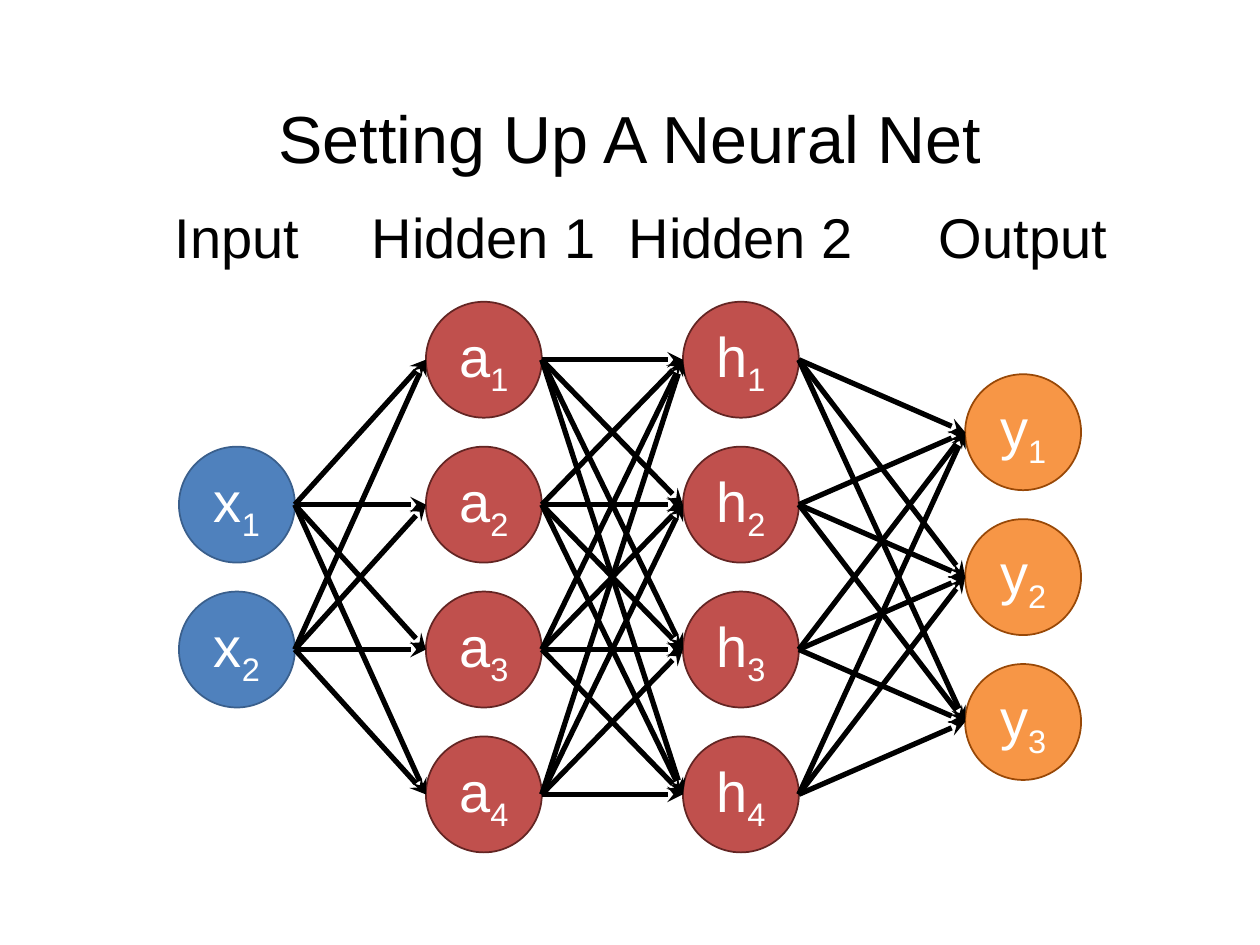
"""Build a slide of a neural net with two hidden layers."""
from dataclasses import dataclass
from itertools import pairwise, product

from lxml import etree
from pptx import Presentation
from pptx import util as u
from pptx.dml.color import RGBColor
from pptx.enum import shapes, text
from pptx.oxml.ns import qn
from pptx.slide import Slide


@dataclass(frozen=True)
class Theme:
    """Colours, font and type sizes of the slide."""
    font: str = "Arial"
    ink: str = "000000"
    pale: str = "FFFFFF"
    blue: tuple[str, str] = ("4F81BD", "3A5F8C")
    red: tuple[str, str] = ("C0504D", "632523")
    orange: tuple[str, str] = ("F79646", "984807")
    title: int = 38
    body: int = 32


@dataclass(frozen=True)
class Layer:
    """One column of nodes, placed by its centre line."""
    label: str
    sign: str
    count: int
    mid: float
    width: float
    paint: tuple[str, str]

    def rows(self) -> list[float]:
        """Return the centre height of each node."""
        top = MIDDLE - PITCH * (self.count - 1) / 2
        return [top + PITCH * row for row in range(self.count)]


THEME = Theme()
SIZE, PITCH, MIDDLE = 0.92, 1.15, 4.58
LAYERS = (
    Layer("Input", "x", 2, 1.88, 1.81, THEME.blue),
    Layer("Hidden 1", "a", 4, 3.84, 1.99, THEME.red),
    Layer("Hidden 2", "h", 4, 5.88, 1.99, THEME.red),
    Layer("Output", "y", 3, 8.12, 1.81, THEME.orange),
)


def style(para, size: int, color: str) -> None:
    """Centre a paragraph and set its font."""
    para.alignment = text.PP_ALIGN.CENTER
    para.font.name = THEME.font
    para.font.size = u.Pt(size)
    para.font.color.rgb = RGBColor.from_string(color)


def add_text(slide: Slide, words: str, box: tuple[float, ...], size: int):
    """Add a centred, wrapping text box and return its frame."""
    frame = slide.shapes.add_textbox(*map(u.Inches, box)).text_frame
    frame.word_wrap = True
    frame.text = words
    style(frame.paragraphs[0], size, THEME.ink)
    return frame


def add_title(slide: Slide, words: str) -> None:
    """Add the slide title."""
    frame = add_text(slide, words, (0.69, 0.4, 8.62, 1.45), THEME.title)
    frame.vertical_anchor = text.MSO_ANCHOR.MIDDLE
    frame.paragraphs[0].line_spacing = 0.9


def add_node(slide: Slide, layer: Layer, index: int, row: float) -> None:
    """Add a round node with a subscripted sign."""
    box = (layer.mid - SIZE / 2, row - SIZE / 2, SIZE, SIZE)
    node = slide.shapes.add_shape(shapes.MSO_SHAPE.OVAL, *map(u.Inches, box))
    node.shadow.inherit = False
    fill, edge = layer.paint
    node.fill.solid()
    node.fill.fore_color.rgb = RGBColor.from_string(fill)
    node.line.color.rgb = RGBColor.from_string(edge)
    node.line.width = u.Pt(1)
    frame = node.text_frame
    frame.margin_left = frame.margin_right = 0
    frame.vertical_anchor = text.MSO_ANCHOR.MIDDLE
    para = frame.paragraphs[0]
    style(para, THEME.body, THEME.pale)
    para.add_run().text = layer.sign
    sub = para.add_run()
    sub.text = str(index)
    sub.font._element.set("baseline", "-25000")


def add_layer(slide: Slide, layer: Layer) -> None:
    """Add the label and nodes of a layer."""
    box = (layer.mid - layer.width / 2, 1.56, layer.width, 0.64)
    add_text(slide, layer.label, box, THEME.body)
    for index, row in enumerate(layer.rows(), 1):
        add_node(slide, layer, index, row)


def add_links(slide: Slide, left: Layer, right: Layer) -> None:
    """Link every node of one layer to every node of the next."""
    start, end = left.mid + SIZE / 2, right.mid - SIZE / 2
    for tail, head in product(left.rows(), right.rows()):
        ends = map(u.Inches, (start, tail, end, head))
        link = slide.shapes.add_connector(shapes.MSO_CONNECTOR.STRAIGHT, *ends)
        link.line.color.rgb = RGBColor.from_string(THEME.ink)
        link.line.width = u.Pt(3)
        props = link._element.spPr
        etree.SubElement(props.find(qn("a:ln")), qn("a:tailEnd"), type="stealth")
        etree.SubElement(props, qn("a:effectLst"))


def main() -> None:
    """Build and save the slide."""
    deck = Presentation()
    deck.slide_width, deck.slide_height = u.Inches(10), u.Inches(7.5)
    slide = deck.slides.add_slide(deck.slide_layouts[6])
    add_title(slide, "Setting Up A Neural Net")
    for layer in LAYERS:
        add_layer(slide, layer)
    for left, right in pairwise(LAYERS):
        add_links(slide, left, right)
    deck.save("out.pptx")


if __name__ == "__main__":
    main()
